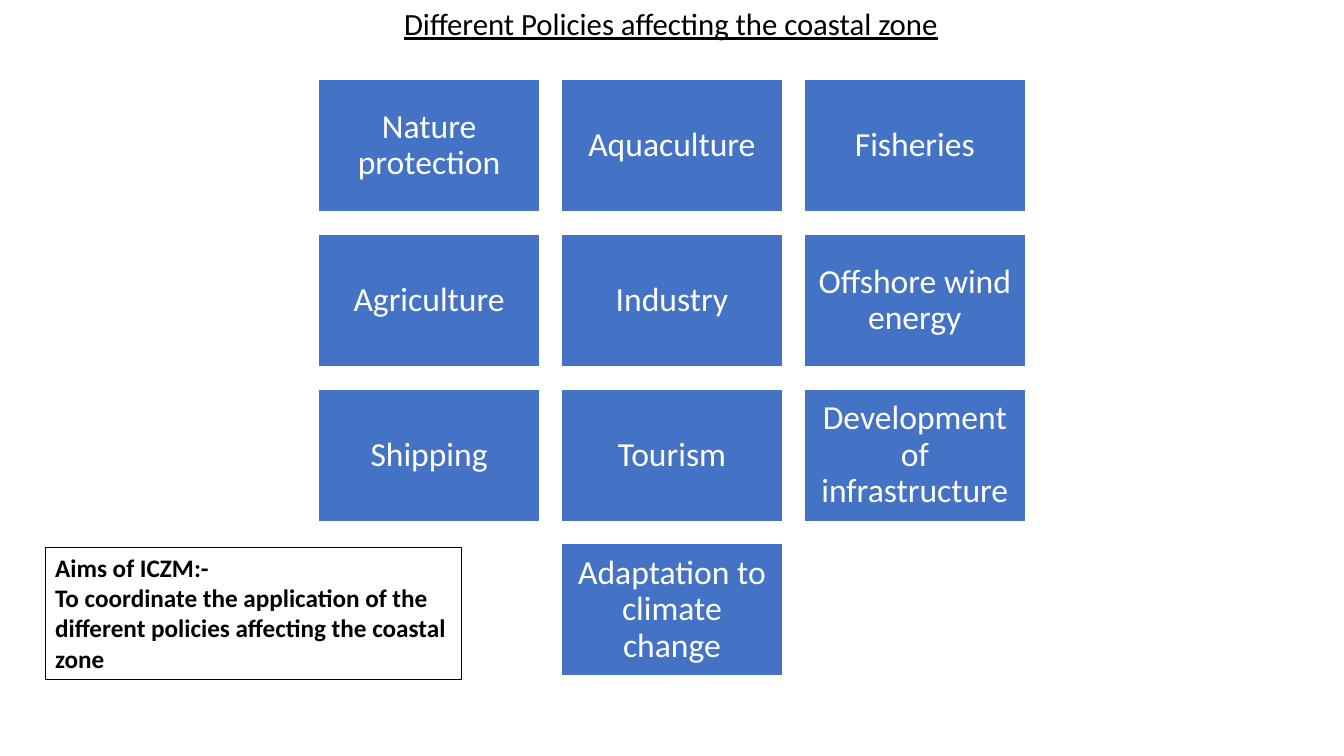
import pptx
import pptx.util
import pptx.dml.color
import pptx.enum.shapes
import pptx.enum.text

Cm = pptx.util.Cm
Pt = pptx.util.Pt
Align = pptx.enum.text.PP_ALIGN
Anchor = pptx.enum.text.MSO_ANCHOR


def paint(code):
    return pptx.dml.color.RGBColor.from_string(code)


def style(para, size, code):
    para.font.name = "Calibri"
    para.font.size = Pt(size)
    para.font.color.rgb = paint(code)


deck = pptx.Presentation()
deck.slide_width = Cm(33.87)
deck.slide_height = Cm(19.05)
slide = deck.slides.add_slide(deck.slide_layouts[5])

title = slide.shapes.title
title.left, title.top = Cm(9.93), Cm(0)
title.width, title.height = Cm(14.1), Cm(1.2)
frame = title.text_frame
frame.text = "Different Policies affecting the coastal zone"
frame.auto_size = pptx.enum.text.MSO_AUTO_SIZE.NONE
frame.vertical_anchor = Anchor.TOP
para = frame.paragraphs[0]
para.alignment = Align.LEFT
style(para, 22, "000000")
para.font.underline = True

rows = [
    ["Nature protection", "Aquaculture", "Fisheries"],
    ["Agriculture", "Industry", "Offshore wind energy"],
    ["Shipping", "Tourism", "Development of infrastructure"],
    ["Adaptation to climate change"],
]
wide, high = 5.57, 3.34
for row, names in enumerate(rows):
    start = 8.03 + (3 - len(names)) * 6.12 / 2
    for col, name in enumerate(names):
        tile = slide.shapes.add_shape(
            pptx.enum.shapes.MSO_SHAPE.RECTANGLE,
            Cm(start + col * 6.12), Cm(2 + row * 3.9), Cm(wide), Cm(high))
        tile.shadow.inherit = False
        tile.fill.solid()
        tile.fill.fore_color.rgb = paint("4472C4")
        tile.line.color.rgb = paint("FFFFFF")
        tile.line.width = Pt(1)
        frame = tile.text_frame
        frame.word_wrap = True
        frame.vertical_anchor = Anchor.MIDDLE
        frame.margin_left = frame.margin_right = Cm(0.25)
        frame.margin_top = frame.margin_bottom = Cm(0.25)
        frame.text = name
        para = frame.paragraphs[0]
        para.alignment = Align.CENTER
        para.line_spacing = 0.9
        style(para, 24, "FFFFFF")

aims = slide.shapes.add_textbox(Cm(1.14), Cm(13.79), Cm(10.49), Cm(3.33))
aims.line.color.rgb = paint("000000")
aims.line.width = Pt(0.75)
frame = aims.text_frame
frame.word_wrap = True
frame.text = ("Aims of ICZM:-\n"
              "To coordinate the application of the different policies "
              "affecting the coastal zone")
for para in frame.paragraphs:
    style(para, 18, "000000")
    para.font.bold = True

deck.save("out.pptx")
